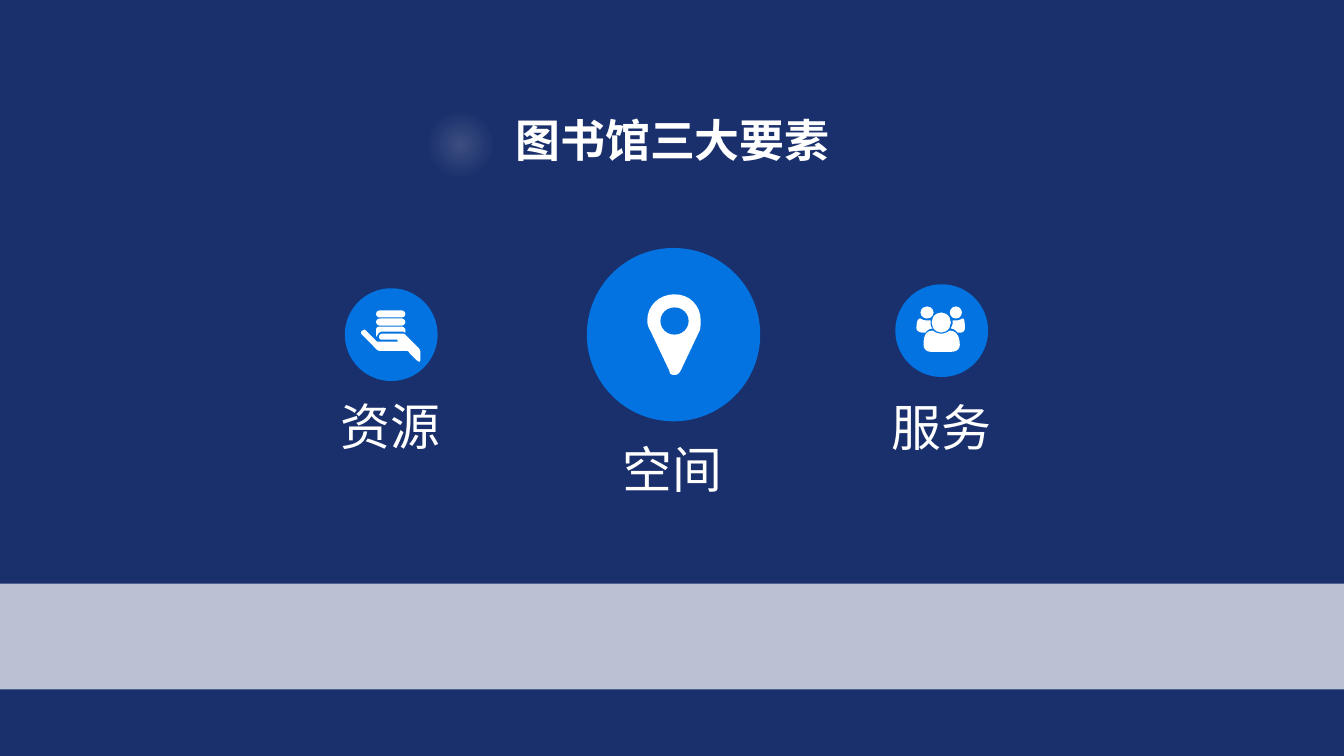
from pptx import Presentation
from pptx.dml.color import RGBColor
from pptx.enum.dml import MSO_THEME_COLOR
from pptx.enum.shapes import MSO_SHAPE
from pptx.enum.text import MSO_ANCHOR, MSO_AUTO_SIZE, PP_ALIGN
from pptx.oxml import parse_xml
from pptx.oxml.ns import nsdecls, qn
from pptx.util import Inches, Pt

OVAL, RECT, ROUND = MSO_SHAPE.OVAL, MSO_SHAPE.RECTANGLE, MSO_SHAPE.ROUNDED_RECTANGLE
CENTER, TOP = PP_ALIGN.CENTER, MSO_ANCHOR.TOP
GROW = MSO_AUTO_SIZE.SHAPE_TO_FIT_TEXT


class Theme:
    font = "Calibri"
    back = RGBColor(0x1A, 0x30, 0x6C)
    blue = RGBColor(0x02, 0x73, 0xE1)
    white = RGBColor(0xFF, 0xFF, 0xFF)
    title = 32.1
    label = 35.6


# Outlines: the first pair starts, a pair is a line, six numbers are a curve.
PIN = [(6.94, 3.28), (6.75, 3.68), (6.73, 3.71, 6.72, 3.72, 6.69, 3.72),
       (6.66, 3.72, 6.64, 3.71, 6.64, 3.68), (6.45, 3.28),
       (6.43, 3.25, 6.42, 3.21, 6.42, 3.18), (6.42, 3.03, 6.54, 2.92, 6.69, 2.92),
       (6.84, 2.92, 6.95, 3.03, 6.95, 3.18), (6.95, 3.21, 6.95, 3.25, 6.94, 3.28)]
HAND = [(3.59, 3.32), (3.74, 3.47), (3.75, 3.48, 3.76, 3.48, 3.77, 3.48), (4.03, 3.48),
        (4.04, 3.48, 4.06, 3.49, 4.06, 3.5), (4.14, 3.58),
        (4.15, 3.58, 4.15, 3.59, 4.16, 3.59), (4.16, 3.59, 4.17, 3.58, 4.17, 3.57),
        (4.17, 3.49), (4.17, 3.48, 4.16, 3.46, 4.15, 3.45), (4.02, 3.32),
        (4.02, 3.32, 4.01, 3.31, 4, 3.31), (3.79, 3.31),
        (3.77, 3.31, 3.76, 3.33, 3.76, 3.34), (3.76, 3.36, 3.77, 3.37, 3.79, 3.37),
        (3.94, 3.37), (3.95, 3.39), (3.74, 3.39), (3.63, 3.28),
        (3.63, 3.28, 3.62, 3.27, 3.61, 3.27), (3.61, 3.27, 3.6, 3.28, 3.59, 3.28),
        (3.58, 3.29, 3.58, 3.31, 3.59, 3.32)]
BOOK = [(3.74, 3.34), (3.74, 3.32, 3.76, 3.29, 3.79, 3.29), (4, 3.29),
        (4.01, 3.29, 4.01, 3.3, 4.02, 3.3), (4.02, 3.27),
        (4.02, 3.26, 4, 3.24, 3.99, 3.24), (3.76, 3.24),
        (3.74, 3.24, 3.73, 3.26, 3.73, 3.27), (3.73, 3.32),
        (3.73, 3.33, 3.73, 3.34, 3.74, 3.34)]
LEFT = [(9.18, 3.3), (9.15, 3.3), (9.12, 3.3, 9.09, 3.28, 9.09, 3.26),
        (9.09, 3.23, 9.09, 3.16, 9.13, 3.16), (9.13, 3.16, 9.16, 3.18, 9.19, 3.18),
        (9.23, 3.18), (9.23, 3.18, 9.23, 3.19, 9.23, 3.2),
        (9.23, 3.22, 9.23, 3.24, 9.25, 3.26), (9.22, 3.26, 9.19, 3.28, 9.18, 3.3)]
FRONT = [(9.44, 3.49), (9.23, 3.49), (9.19, 3.49, 9.16, 3.46, 9.16, 3.42),
         (9.16, 3.36, 9.17, 3.28, 9.25, 3.28), (9.26, 3.28, 9.28, 3.31, 9.34, 3.31),
         (9.38, 3.31, 9.42, 3.28, 9.42, 3.28), (9.5, 3.28, 9.52, 3.36, 9.52, 3.42),
         (9.52, 3.46, 9.49, 3.49, 9.44, 3.49)]
RIGHT = [(9.53, 3.3), (9.5, 3.3), (9.48, 3.28, 9.46, 3.26, 9.43, 3.26),
         (9.44, 3.24, 9.45, 3.22, 9.45, 3.2), (9.45, 3.19, 9.45, 3.18, 9.45, 3.18),
         (9.46, 3.18, 9.47, 3.18, 9.48, 3.18), (9.52, 3.18, 9.54, 3.16, 9.55, 3.16),
         (9.57, 3.16, 9.57, 3.23, 9.57, 3.26), (9.57, 3.28, 9.55, 3.3, 9.53, 3.3)]

TITLE = "图书馆三大要素"
# label, label box left and top, disc, outlines, preset parts
ITEMS = [
    ("资源", (2.41, 3.88), (3.42, 2.86, 0.92), [HAND, BOOK],
     [(ROUND, (3.73, 3.16, 0.29, 0.07), Theme.white),
      (ROUND, (3.73, 3.08, 0.29, 0.07), Theme.white)]),
    ("服务", (7.88, 3.89), (8.88, 2.82, 0.92), [LEFT, FRONT, RIGHT],
     [(OVAL, (9.13, 3.04, 0.13, 0.12), Theme.white),
      (OVAL, (9.24, 3.1, 0.19, 0.2), Theme.white),
      (OVAL, (9.42, 3.04, 0.12, 0.12), Theme.white)]),
    ("空间", (5.21, 4.3), (5.82, 2.46, 1.72), [PIN],
     [(OVAL, (6.55, 3.05, 0.28, 0.27), Theme.blue)]),
]


def paint(shape, color):
    shape.shadow.inherit = False
    shape.fill.solid()
    shape.fill.fore_color.rgb = color
    shape.line.fill.background()
    return shape


def add_part(shapes, kind, box, color):
    shape = paint(shapes.add_shape(kind, *map(Inches, box)), color)
    if kind == ROUND:
        shape.adjustments[0] = 0.5
    return shape


def flatten(steps, count=8):
    """Turn an outline into points, each curve cut into count pieces."""
    points = [steps[0]]
    for step in steps[1:]:
        if len(step) == 2:
            points.append(step)
            continue
        ends = [points[-1], step[:2], step[2:4], step[4:]]
        for i in range(1, count + 1):
            t = i / count
            u = 1 - t
            parts = (u ** 3, 3 * u * u * t, 3 * u * t * t, t ** 3)
            points.append(tuple(sum(w * p[k] for w, p in zip(parts, ends))
                                for k in (0, 1)))
    return points


def add_outline(shapes, steps):
    points = [(Inches(x), Inches(y)) for x, y in flatten(steps)]
    pen = shapes.build_freeform(*points[0])
    pen.add_line_segments(points[1:], close=True)
    paint(pen.convert_to_shape(), Theme.white)


def set_text(shape, text, size, bold=False):
    frame = shape.text_frame
    frame.text = text
    frame.word_wrap = True
    frame.auto_size = GROW
    frame.vertical_anchor = TOP
    para = frame.paragraphs[0]
    para.alignment = CENTER
    font = para.runs[0].font
    font.name, font.size, font.bold = Theme.font, Pt(size), bold
    font.color.rgb = Theme.white


def add_glow(shapes):
    glow = add_part(shapes, OVAL, (4.01, 0.88, 1.11, 1.11), Theme.white)
    stops = "".join(
        f'<a:gs pos="{pos}"><a:srgbClr val="{Theme.white}"><a:alpha val="{alpha}"/>'
        "</a:srgbClr></a:gs>"
        for pos, alpha in ((0, 15000), (42000, 0), (100000, 0)))
    fill = parse_xml(
        f'<a:gradFill {nsdecls("a")} rotWithShape="1"><a:gsLst>{stops}</a:gsLst>'
        '<a:path path="circle"><a:fillToRect l="50000" t="50000" r="50000" b="50000"/>'
        "</a:path></a:gradFill>")
    props = glow.element.spPr
    props.replace(props.find(qn("a:solidFill")), fill)


def add_band(shapes):
    band = add_part(shapes, RECT, (0, 5.79, 13.33, 1.05), Theme.white)
    color = band.element.spPr.find(qn("a:solidFill"))[0]
    color.append(parse_xml(f'<a:alpha {nsdecls("a")} val="70000"/>'))


def add_item(shapes, label, spot, disc, outlines, parts):
    box = shapes.add_textbox(*map(Inches, (*spot, 2.92, 0.7)))
    set_text(box, label, Theme.label)
    icon = shapes.add_group_shape().shapes
    left, top, size = disc
    add_part(icon, OVAL, (left, top, size, size), Theme.blue)
    for steps in outlines:
        add_outline(icon, steps)
    for part in parts:
        add_part(icon, *part)


def main():
    deck = Presentation()
    deck.slide_width, deck.slide_height = Inches(13.33), Inches(7.5)
    slide = deck.slides.add_slide(deck.slide_layouts[5])
    slide.background.fill.solid()
    slide.background.fill.fore_color.rgb = Theme.back
    shapes = slide.shapes
    title = shapes.title
    title.left, title.top, title.width, title.height = map(
        Inches, (4.75, 1.07, 3.84, 0.64))
    set_text(title, TITLE, Theme.title, bold=True)
    add_glow(shapes)
    add_band(shapes)
    for item in ITEMS:
        add_item(shapes, *item)
    deck.save("out.pptx")


if __name__ == "__main__":
    main()
